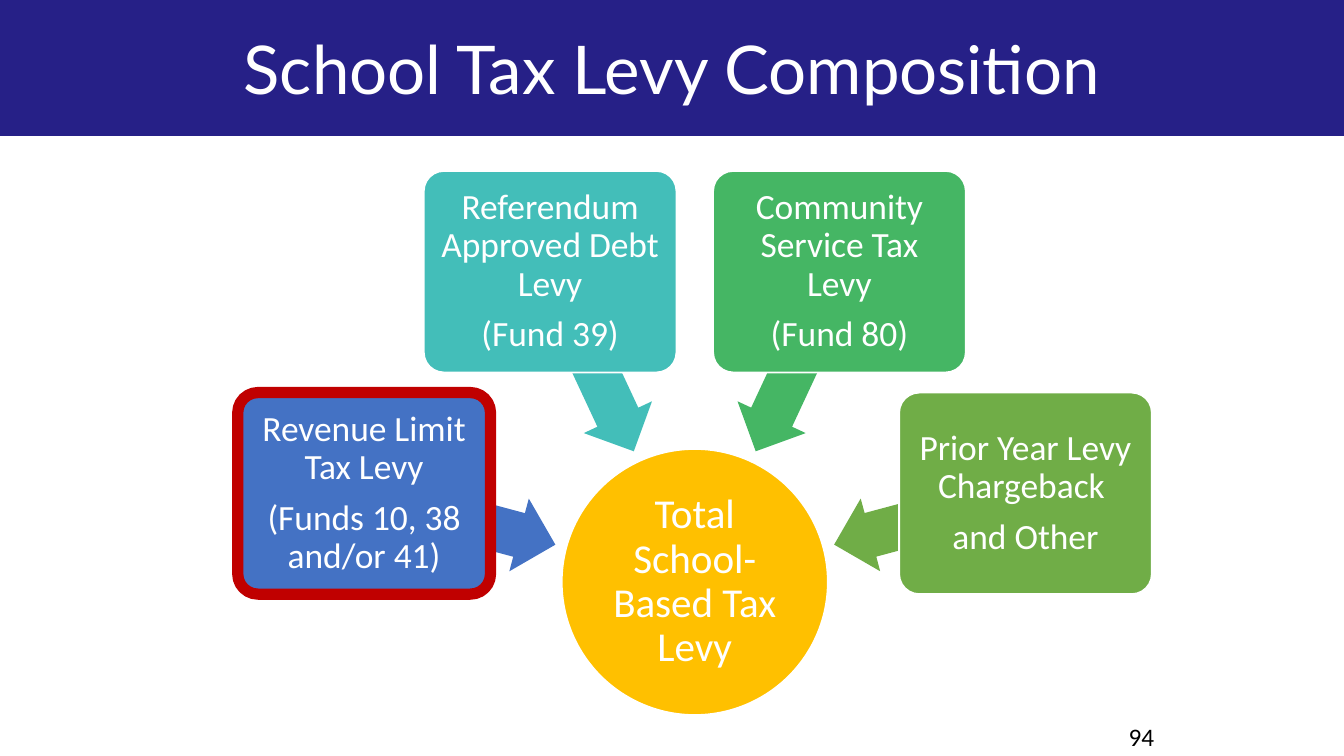
from math import cos, radians, sin

from pptx import Presentation
from pptx.dml.color import RGBColor
from pptx.enum.shapes import MSO_SHAPE
from pptx.enum.text import MSO_ANCHOR, MSO_AUTO_SIZE, PP_ALIGN
from pptx.util import Pt

WHITE = RGBColor(0xFF, 0xFF, 0xFF)
BLACK = RGBColor(0, 0, 0)
NAVY = RGBColor(0x26, 0x20, 0x87)
GOLD = RGBColor(0xFF, 0xC0, 0x00)
RED = RGBColor(0xC0, 0x00, 0x00)
BLUE = RGBColor(0x44, 0x72, 0xC4)
TEAL = RGBColor(0x43, 0xBE, 0xB9)
GREEN = RGBColor(0x45, 0xB6, 0x64)
OLIVE = RGBColor(0x70, 0xAD, 0x47)

# The levies lie on arcs around the hub
HUB_X, HUB_Y, HUB_SIZE = 372.2, 311.8, 142.6
ARROW_ARC, BOX_ARC = 130.2, 183.4
START, STEP = 15, 50

# Lines of text, fill, outline colour, outline width
LEVIES = [
    (["Revenue Limit Tax Levy", "(Funds 10, 38 and/or 41)"], BLUE, RED, 6),
    (["Referendum Approved Debt Levy", "(Fund 39)"], TEAL, WHITE, 1),
    (["Community Service Tax Levy", "(Fund 80)"], GREEN, WHITE, 1),
    (["Prior Year Levy Chargeback ", "and Other"], OLIVE, WHITE, 1),
]


def add_shape(slide, kind, mid, size, fill, line=None, weight=1):
    """Add a filled shape centred on mid."""
    (x, y), (w, h) = mid, size
    shape = slide.shapes.add_shape(
        kind, Pt(x - w / 2), Pt(y - h / 2), Pt(w), Pt(h))
    shape.shadow.inherit = False
    shape.fill.solid()
    shape.fill.fore_color.rgb = fill
    if line is None:
        shape.line.fill.background()
    else:
        shape.line.color.rgb = line
        shape.line.width = Pt(weight)
    return shape


def style(par, size, color, font="Calibri"):
    for run in par.runs:
        run.font.name = font
        run.font.size = Pt(size)
        run.font.color.rgb = color


def set_label(shape, lines, size, inset):
    frame = shape.text_frame
    frame.word_wrap = True
    frame.vertical_anchor = MSO_ANCHOR.MIDDLE
    frame.margin_left = frame.margin_right = Pt(inset)
    frame.margin_top = frame.margin_bottom = Pt(inset)
    frame.text = "\n".join(lines)
    for par in frame.paragraphs:
        par.alignment = PP_ALIGN.CENTER
        par.line_spacing = 0.9
        style(par, size, WHITE)
    for par in frame.paragraphs[1:]:
        par.space_before = Pt(size * 0.35)


def add_title(slide, text):
    banner = add_shape(slide, MSO_SHAPE.RECTANGLE, (360, 36.4), (720, 72.8), NAVY)
    slide.shapes._spTree.insert(2, banner._element)  # behind the title
    title = slide.shapes.title
    title.left, title.top = Pt(36), Pt(4.3)
    title.width, title.height = Pt(648), Pt(69)
    frame = title.text_frame
    frame.text = text
    frame.auto_size = MSO_AUTO_SIZE.NONE
    frame.vertical_anchor = MSO_ANCHOR.MIDDLE
    par = frame.paragraphs[0]
    par.alignment = PP_ALIGN.CENTER
    par.line_spacing = 0.9
    style(par, 36, WHITE, "Lato")


def add_number(slide, text):
    box = slide.shapes.add_textbox(Pt(597.6), Pt(383), Pt(39.6), Pt(18))
    box.text_frame.word_wrap = True
    box.text_frame.text = text
    style(box.text_frame.paragraphs[0], 13.5, BLACK)


def add_hub(slide, lines):
    hub = add_shape(slide, MSO_SHAPE.OVAL, (HUB_X, HUB_Y),
                    (HUB_SIZE, HUB_SIZE), GOLD, WHITE)
    set_label(hub, lines, 22, 1.4)


def on_arc(radius, angle):
    """Point around the hub, with the angle counted clockwise from the left."""
    turn = radians(angle)
    return HUB_X - radius * cos(turn), HUB_Y - radius * sin(turn)


def add_levy(slide, angle, lines, fill, line, weight):
    arrow = add_shape(slide, MSO_SHAPE.LEFT_ARROW, on_arc(ARROW_ARC, angle),
                      (105.8, 40.3), fill)
    arrow.adjustments[0] = 0.6
    arrow.adjustments[1] = 0.5
    arrow.rotation = 180 + angle
    box = add_shape(slide, MSO_SHAPE.ROUNDED_RECTANGLE, on_arc(BOX_ARC, angle),
                    (135.4, 108), fill, line, weight)
    box.adjustments[0] = 0.1
    set_label(box, lines, 19, 3)


def main():
    prs = Presentation()
    prs.slide_width, prs.slide_height = Pt(720), Pt(405)
    slide = prs.slides.add_slide(prs.slide_layouts[5])

    # Heading and page number
    add_title(slide, "School Tax Levy Composition")
    add_number(slide, "94")

    # Total with the levies that feed it
    add_hub(slide, ["Total School-Based Tax Levy"])
    for i, levy in enumerate(LEVIES):
        add_levy(slide, START + i * STEP, *levy)

    prs.save("out.pptx")


if __name__ == "__main__":
    main()
